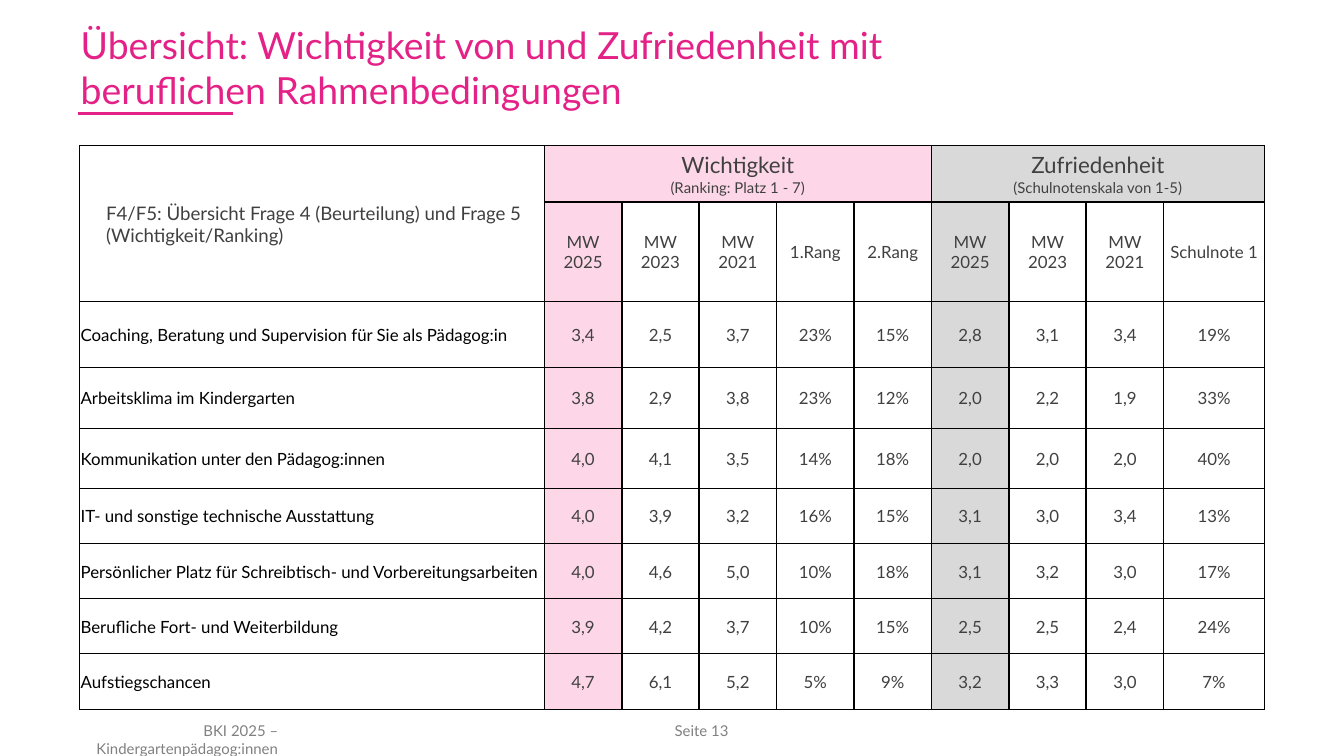
import pptx
import pptx.dml.color
import pptx.enum.shapes
import pptx.enum.text
import pptx.oxml.ns
import pptx.util
import lxml.etree

COLORS = {
    "accent": "E42187",
    "importance": "FDD7E8",
    "satisfaction": "D9D9D9",
    "text": "404040",
    "label": "000000",
    "border": "000000",
    "footer": "808080",
}
LEFT = pptx.enum.text.PP_ALIGN.LEFT
CENTER = pptx.enum.text.PP_ALIGN.CENTER
RIGHT = pptx.enum.text.PP_ALIGN.RIGHT
MIDDLE = pptx.enum.text.MSO_ANCHOR.MIDDLE


def add_text(para, text, size, color, align):
    para.alignment = align
    span = para.add_run()
    span.text = text
    span.font.name = "Lato"
    span.font.size = pptx.util.Pt(size)
    span.font.color.rgb = pptx.dml.color.RGBColor.from_string(COLORS[color])


def add_border(cell, side, width):
    properties = cell._tc.get_or_add_tcPr()
    line = lxml.etree.SubElement(properties, pptx.oxml.ns.qn("a:ln" + side),
                                 w=str(pptx.util.Pt(width)))
    fill = lxml.etree.SubElement(line, pptx.oxml.ns.qn("a:solidFill"))
    lxml.etree.SubElement(fill, pptx.oxml.ns.qn("a:srgbClr"), val=COLORS["border"])


# Slide in 16:9
deck = pptx.Presentation()
deck.slide_width = pptx.util.Inches(10)
deck.slide_height = deck.slide_width * 9 // 16
page = deck.slides.add_slide(deck.slide_layouts[5])

# Grid of 100 columns by 100 rows
column = deck.slide_width / 100
row = deck.slide_height / 100

# Footer
footers = [("Seite 13", 48.8, 6.4), ("BKI 2025 – Kindergartenpädagog:innen", 2.4, 19.3)]
for text, left, width in footers:
    box = page.shapes.add_textbox(int(left * column), int(94.6 * row),
                                  int(width * column), int(4.3 * row))
    box.text_frame.word_wrap = True
    add_text(box.text_frame.paragraphs[0], text, 8, "footer", RIGHT)

# Rule under the title
rule = page.shapes.add_connector(pptx.enum.shapes.MSO_CONNECTOR.STRAIGHT,
                                 int(5.8 * column), int(15 * row),
                                 int(17.35 * column), int(15 * row))
rule.line.color.rgb = pptx.dml.color.RGBColor.from_string(COLORS["accent"])
rule.line.width = pptx.util.Pt(1.5)
lxml.etree.SubElement(rule._element.spPr, pptx.oxml.ns.qn("a:effectLst"))

# Title
title = page.shapes.title
title.left, title.top = int(5 * column), int(4.05 * row)
title.width, title.height = int(77.3 * column), int(9.6 * row)
title.text_frame.auto_size = pptx.enum.text.MSO_AUTO_SIZE.NONE
title.text_frame.word_wrap = True
title.text_frame.vertical_anchor = MIDDLE
para = title.text_frame.paragraphs[0]
add_text(para, "Übersicht: Wichtigkeit von und Zufriedenheit mit", 20, "accent", LEFT)
para.add_line_break()
add_text(para, "beruflichen Rahmenbedingungen", 20, "accent", LEFT)

# Table contents
question = "F4/F5: Übersicht Frage 4 (Beurteilung) und Frage 5 (Wichtigkeit/Ranking)"
groups = {1: ("Wichtigkeit", "(Ranking: Platz 1 - 7)"),
          6: ("Zufriedenheit", "(Schulnotenskala von 1-5)")}
years = ["MW\n2025", "MW\n2023", "MW\n2021"]
headings = [""] + years + ["1.Rang", "2.Rang"] + years + ["Schulnote 1"]
ratings = [
    ("Coaching, Beratung und Supervision für Sie als Pädagog:in",
     "3,4 2,5 3,7 23% 15% 2,8 3,1 3,4 19%"),
    ("Arbeitsklima im Kindergarten", "3,8 2,9 3,8 23% 12% 2,0 2,2 1,9 33%"),
    ("Kommunikation unter den Pädagog:innen", "4,0 4,1 3,5 14% 18% 2,0 2,0 2,0 40%"),
    ("IT- und sonstige technische Ausstattung", "4,0 3,9 3,2 16% 15% 3,1 3,0 3,4 13%"),
    ("Persönlicher Platz für Schreibtisch- und Vorbereitungsarbeiten",
     "4,0 4,6 5,0 10% 18% 3,1 3,2 3,0 17%"),
    ("Berufliche Fort- und Weiterbildung", "3,9 4,2 3,7 10% 15% 2,5 2,5 2,4 24%"),
    ("Aufstiegschancen", "4,7 6,1 5,2 5% 9% 3,2 3,3 3,0 7%"),
]
lines = [headings] + [[label] + values.split() for label, values in ratings]

# Table grid
table_width, label_width, grade_width = 88.2, 34.6, 7.5
value_width = (table_width - label_width - grade_width) / 8
widths = [label_width] + [value_width] * 8 + [grade_width]
heights = [7.5, 13.2, 8.7, 8, 8, 7.3, 7.3, 7.3, 7.4]
frame = page.shapes.add_table(len(heights), len(widths), int(5.9 * column), int(19.2 * row),
                              int(table_width * column), int(sum(heights) * row))
table = frame.table
table.first_row = table.horz_banding = False
for index, width in enumerate(widths):
    table.columns[index].width = int(width * column)
for index, height in enumerate(heights):
    table.rows[index].height = int(height * row)

# Cell borders, fills and margins
for r in range(len(heights)):
    for c in range(len(widths)):
        cell = table.cell(r, c)
        add_border(cell, "L", 0.25 if c == 0 else 1)
        add_border(cell, "R", 0.25 if c == len(widths) - 1 else 1)
        add_border(cell, "T", 1 if r in (1, 2) else 0.25)
        add_border(cell, "B", 1 if r in (0, 1) else 0.25)
        if c in (1, 6) or (r == 0 and c > 0):
            cell.fill.solid()
            shade = COLORS["importance" if c < 6 else "satisfaction"]
            cell.fill.fore_color.rgb = pptx.dml.color.RGBColor.from_string(shade)
        else:
            cell.fill.background()
        cell.vertical_anchor = MIDDLE
        cell.margin_left = cell.margin_right = cell.margin_top = pptx.util.Inches(0.01)
        cell.margin_bottom = 0

# Merged header cells
corner = table.cell(0, 0)
corner.merge(table.cell(1, 0))
corner.margin_left = pptx.util.Inches(0.2)
add_text(corner.text_frame.paragraphs[0], question, 10, "text", LEFT)
for (start, (name, scale)), end in zip(groups.items(), (5, 9)):
    cell = table.cell(0, start)
    cell.merge(table.cell(0, end))
    add_text(cell.text_frame.paragraphs[0], name, 12, "text", CENTER)
    add_text(cell.text_frame.add_paragraph(), scale, 8, "text", CENTER)

# Column headings and ratings
for r, line in enumerate(lines, start=1):
    for c, content in enumerate(line):
        if not content:
            continue
        text_frame = table.cell(r, c).text_frame
        for index, part in enumerate(content.split("\n")):
            para = text_frame.add_paragraph() if index else text_frame.paragraphs[0]
            add_text(para, part, 9, "text" if c else "label", CENTER if c else LEFT)

deck.save("out.pptx")
